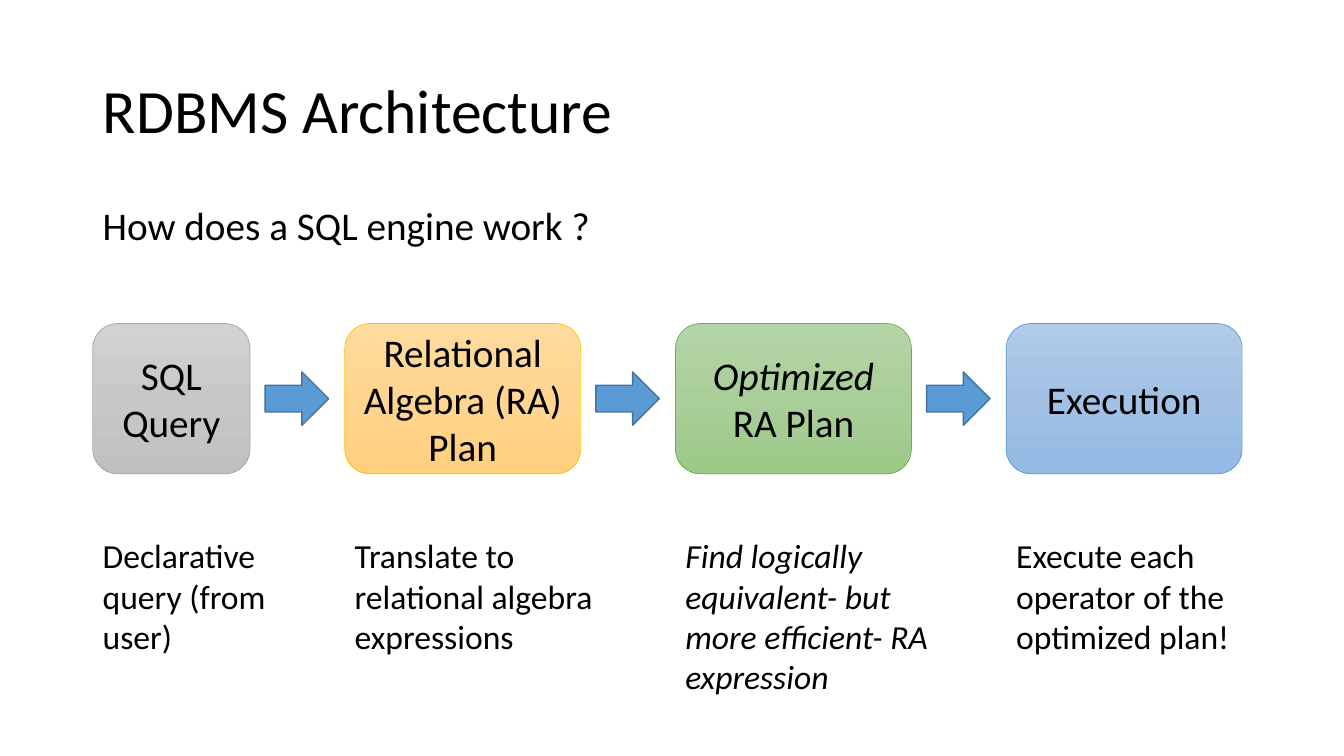
"""Build the RDBMS architecture slide: four query stages joined by arrows."""
import copy
import dataclasses
import typing

import pptx
import pptx.dml.color
import pptx.enum.shapes
import pptx.enum.text
import pptx.oxml.ns
import pptx.util

EMU_PER_PX = 9144
SLIDE_WIDTH, SLIDE_HEIGHT = 1333, 750
LEFT, CONTENT_WIDTH = 92, 1150
STAGE_TOP, STAGE_HEIGHT, STAGE_GAP = 321, 149, 94
ARROW_WIDTH, ARROW_HEIGHT = 63, 53
CAPTION_TOP = 526

Align = pptx.enum.text.PP_ALIGN
Anchor = pptx.enum.text.MSO_ANCHOR
AutoSize = pptx.enum.text.MSO_AUTO_SIZE
Preset = pptx.enum.shapes.MSO_SHAPE


@dataclasses.dataclass(frozen=True)
class Theme:
    font: str = "Calibri"
    text: str = "000000"
    arrow: str = "5B9BD5"
    arrow_edge: str = "43739E"
    title_size: int = 44
    body_size: int = 28
    caption_size: int = 24
    stage_edge_width: float = 0.5
    arrow_edge_width: float = 1


class Run(typing.NamedTuple):
    text: str
    italic: bool = False


@dataclasses.dataclass(frozen=True)
class Stage:
    label: tuple[Run, ...]
    caption: Run
    gradient: tuple[str, str, str]
    edge: str
    width: int = 234
    caption_width: int = 270
    caption_height: int = 131


THEME = Theme()
STAGES = (
    Stage((Run("SQL Query"),), Run("Declarative query (from user)"),
          ("D2D2D2", "C8C8C8", "C0C0C0"), "A5A5A5", width=156, caption_width=199),
    Stage((Run("Relational Algebra (RA) Plan"),),
          Run("Translate to relational algebra expressions"),
          ("FFDB9E", "FFD590", "FFD07C"), "FFC000"),
    Stage((Run("Optimized", italic=True), Run(" RA Plan")),
          Run("Find logically equivalent- but more efficient- RA expression", italic=True),
          ("B5D5A7", "AACE9A", "9CC987"), "70AD47", caption_height=172),
    Stage((Run("Execution"),), Run("Execute each operator of the optimized plan!"),
          ("B1CBE9", "A3C1E5", "93B9E4"), "5B9BD5"),
)


def px(length: int) -> pptx.util.Emu:
    return pptx.util.Emu(length * EMU_PER_PX)


def rgb(value: str) -> pptx.dml.color.RGBColor:
    return pptx.dml.color.RGBColor.from_string(value)


def write(shape, runs: tuple[Run, ...], size: int, align=Align.LEFT,
          anchor=Anchor.TOP, line_spacing: float = 1.0, auto_size=AutoSize.NONE) -> None:
    frame = shape.text_frame
    frame.word_wrap = True
    frame.auto_size = auto_size
    frame.vertical_anchor = anchor
    paragraph = frame.paragraphs[0]
    paragraph.alignment = align
    paragraph.line_spacing = line_spacing
    for text, italic in runs:
        run = paragraph.add_run()
        run.text = text
        run.font.name = THEME.font
        run.font.size = pptx.util.Pt(size)
        run.font.italic = italic
        run.font.color.rgb = rgb(THEME.text)


def add_preset(slide, preset, left: int, top: int, width: int, height: int,
               edge: str, edge_width: float):
    shape = slide.shapes.add_shape(preset, px(left), px(top), px(width), px(height))
    shape.shadow.inherit = False
    shape.line.color.rgb = rgb(edge)
    shape.line.width = pptx.util.Pt(edge_width)
    return shape


def fill_gradient(shape, colors: tuple[str, str, str]) -> None:
    shape.fill.gradient()
    shape.fill.gradient_angle = 270
    stop_list = shape._element.spPr.find(".//" + pptx.oxml.ns.qn("a:gsLst"))
    stop_list.insert(1, copy.deepcopy(stop_list[0]))
    for stop, color, position in zip(shape.fill.gradient_stops, colors, (0, 0.5, 1)):
        stop.color.rgb = rgb(color)
        stop.position = position


def add_text(slide, runs: tuple[Run, ...], left: int, top: int, width: int, height: int,
             size: int, line_spacing: float = 1.0, auto_size=AutoSize.NONE) -> None:
    box = slide.shapes.add_textbox(px(left), px(top), px(width), px(height))
    write(box, runs, size, line_spacing=line_spacing, auto_size=auto_size)


def add_stage(slide, stage: Stage, left: int) -> None:
    box = add_preset(slide, Preset.ROUNDED_RECTANGLE, left, STAGE_TOP, stage.width,
                     STAGE_HEIGHT, stage.edge, THEME.stage_edge_width)
    fill_gradient(box, stage.gradient)
    write(box, stage.label, THEME.body_size, Align.CENTER, Anchor.MIDDLE)
    add_text(slide, (stage.caption,), left, CAPTION_TOP, stage.caption_width,
             stage.caption_height, THEME.caption_size, auto_size=AutoSize.SHAPE_TO_FIT_TEXT)


def add_arrow(slide, gap_left: int) -> None:
    arrow = add_preset(slide, Preset.RIGHT_ARROW, gap_left + (STAGE_GAP - ARROW_WIDTH) // 2,
                       STAGE_TOP + (STAGE_HEIGHT - ARROW_HEIGHT) // 2,
                       ARROW_WIDTH, ARROW_HEIGHT, THEME.arrow_edge, THEME.arrow_edge_width)
    arrow.fill.solid()
    arrow.fill.fore_color.rgb = rgb(THEME.arrow)


def main() -> None:
    deck = pptx.Presentation()
    deck.slide_width, deck.slide_height = px(SLIDE_WIDTH), px(SLIDE_HEIGHT)
    slide = deck.slides.add_slide(deck.slide_layouts.get_by_name("Title Only"))

    title = slide.shapes.title
    title.left, title.top = px(LEFT), px(40)
    title.width, title.height = px(CONTENT_WIDTH), px(145)
    write(title, (Run("RDBMS Architecture"),), THEME.title_size,
          anchor=Anchor.MIDDLE, line_spacing=0.9)
    add_text(slide, (Run("How does a SQL engine work ?"),), LEFT, 200, CONTENT_WIDTH, 66,
             THEME.body_size, line_spacing=0.9)

    left = LEFT
    for stage in STAGES:
        add_stage(slide, stage, left)
        left += stage.width
        if stage is not STAGES[-1]:
            add_arrow(slide, left)
        left += STAGE_GAP

    deck.save("out.pptx")


if __name__ == "__main__":
    main()
